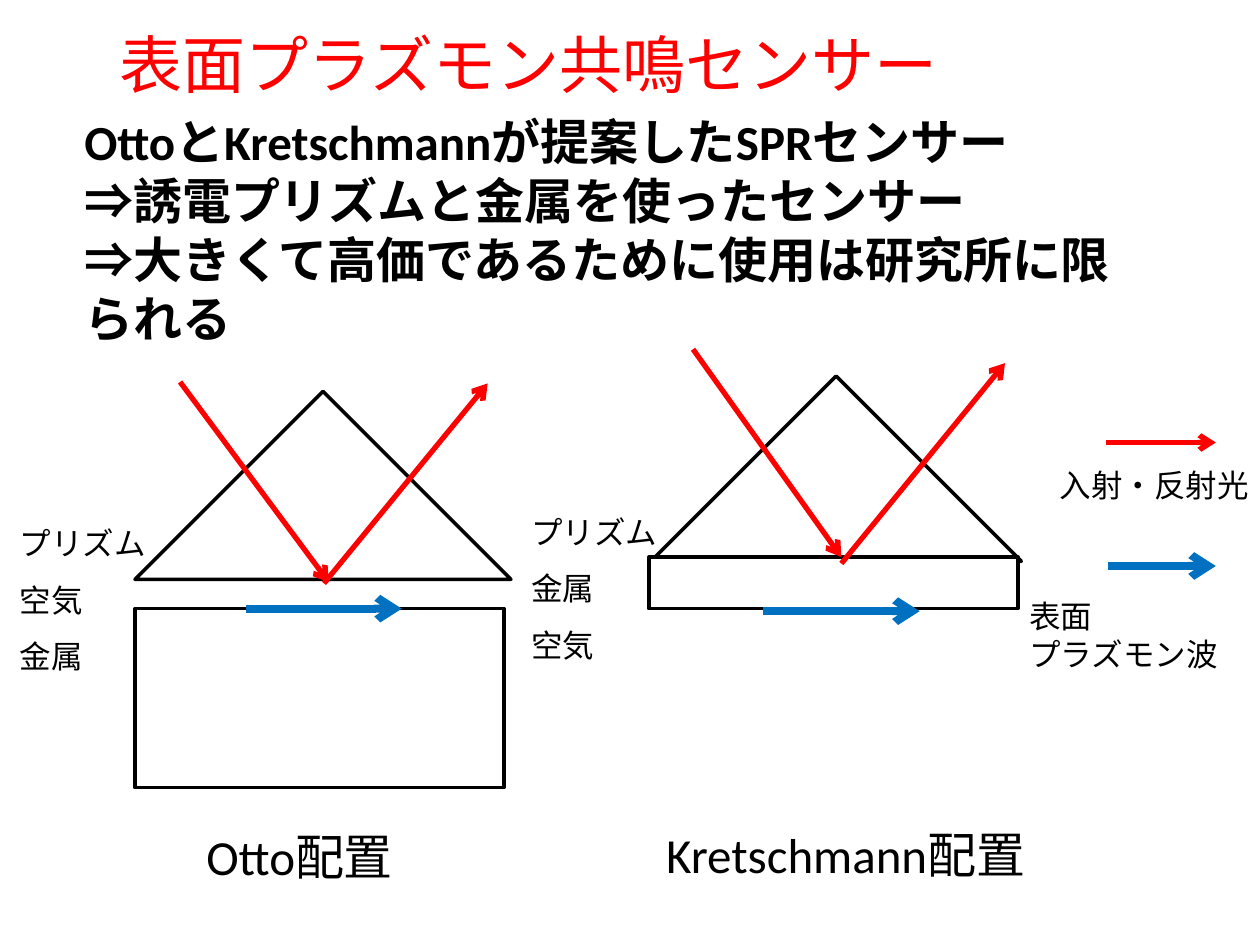
from pptx import Presentation
from pptx.dml.color import RGBColor
from pptx.enum.shapes import MSO_CONNECTOR as Line, MSO_SHAPE as Shape
from pptx.enum.text import MSO_AUTO_SIZE as AutoSize
from pptx.oxml.ns import qn
from pptx.util import Cm, Pt
from lxml.etree import SubElement

BLACK, WHITE, RED, BLUE = "000000", "FFFFFF", "FF0000", "0070C0"
LIGHT_PT, WAVE_PT = 3, 4.5


def rgb(hex_code):
    return RGBColor.from_string(hex_code)


def add_text(s, x, y, w, h, lines, size, color=BLACK, bold=False, spacing=None):
    tf = s.shapes.add_textbox(Cm(x), Cm(y), Cm(w), Cm(h)).text_frame
    tf.word_wrap = True
    tf.auto_size = AutoSize.SHAPE_TO_FIT_TEXT
    for i, line in enumerate(lines):
        p = tf.add_paragraph() if i else tf.paragraphs[0]
        if spacing:
            p.line_spacing = spacing
        r = p.add_run()
        r.text = line
        r.font.name = "Calibri"
        r.font.size = Pt(size)
        r.font.bold = bold
        r.font.color.rgb = rgb(color)


def add_block(s, kind, x, y, w, h, rotation=0):
    sp = s.shapes.add_shape(kind, Cm(x), Cm(y), Cm(w), Cm(h))
    sp.rotation = rotation
    sp.shadow.inherit = False
    sp.fill.solid()
    sp.fill.fore_color.rgb = rgb(WHITE)
    sp.line.color.rgb = rgb(BLACK)
    sp.line.width = Pt(2)


def add_arrow(s, x1, y1, x2, y2, color, width):
    cxn = s.shapes.add_connector(Line.STRAIGHT, Cm(x1), Cm(y1), Cm(x2), Cm(y2))
    cxn.line.color.rgb = rgb(color)
    cxn.line.width = Pt(width)
    SubElement(cxn.line._get_or_add_ln(), qn("a:tailEnd"), type="arrow")
    SubElement(cxn._element.spPr, qn("a:effectLst"))


def add_heading(s, x, y, w):
    add_text(s, x + 0.71, y, w, 1.8, ["表面プラズモン共鳴センサー"], 36, RED)
    add_text(s, x, y + 1.75, w, 5.05, [
        "OttoとKretschmannが提案したSPRセンサー",
        "⇒誘電プリズムと金属を使ったセンサー",
        "⇒大きくて高価であるために使用は研究所に限られる",
    ], 28, bold=True)


def add_setup(s, x, y, prism, metal, layers, caption, rays, wave):
    """Draw one sensor layout; all parts are relative to (x, y)."""
    # Prism and metal
    px, py, pw, ph = prism
    add_block(s, Shape.RIGHT_TRIANGLE, x + px, y + py, pw, ph, rotation=135)
    mx, my, mw, mh = metal
    add_block(s, Shape.RECTANGLE, x + mx, y + my, mw, mh)

    # Layer names and caption
    names, top, width = layers
    add_text(s, x, y + top, width, 3.71, names, 18, spacing=1.5)
    title, cx, cy, cw = caption
    add_text(s, x + cx, y + cy, cw, 1.45, [title], 28)

    # Incident and reflected light, then the plasmon wave
    for x1, y1, x2, y2 in rays:
        add_arrow(s, x + x1, y + y1, x + x2, y + y2, RED, LIGHT_PT)
    wx, wy = wave
    add_arrow(s, x + wx, y + wy, x + wx + 3.15, y + wy, BLUE, WAVE_PT)


def add_legend(s, x, y):
    add_arrow(s, x + 1.8, y, x + 4.01, y, RED, LIGHT_PT)
    add_text(s, x + 0.61, y + 0.36, 5.18, 1.02, ["入射・反射光"], 18)
    add_arrow(s, x + 1.83, y + 2.49, x + 4.01, y + 2.49, BLUE, WAVE_PT)
    add_text(s, x, y + 3, 4.9, 1.8, ["表面", "プラズモン波"], 18)


def main():
    prs = Presentation()
    prs.slide_width, prs.slide_height = Cm(25.4), Cm(19.05)
    s = prs.slides.add_slide(prs.slide_layouts[6])

    add_heading(s, 1.45, 0.38, 21.23)
    # Otto: air gap between prism and metal
    add_setup(
        s, 0.15, 7.7,
        prism=(3.68, 1.3, 5.36, 5.36),
        metal=(2.57, 4.57, 7.44, 3.61),
        layers=(["プリズム", "空気", "金属"], 2.36, 3.4),
        caption=("Otto配置", 3.76, 8.84, 5.08),
        rays=[(3.48, 0, 6.48, 4.04), (6.38, 4.06, 9.68, 0.03)],
        wave=(4.8, 4.57),
    )
    # Kretschmann: metal film directly on the prism
    add_setup(
        s, 10.46, 7.04,
        prism=(3.84, 1.6, 5.18, 5.28),
        metal=(2.62, 4.19, 7.44, 1.04),
        layers=(["プリズム", "金属", "空気"], 2.79, 3.63),
        caption=("Kretschmann配置", 2.72, 9.45, 10.52),
        rays=[(3.51, 0, 6.5, 4.19), (6.5, 4.32, 9.8, 0.28)],
        wave=(4.93, 5.28),
    )
    add_legend(s, 20.5, 8.92)
    prs.save("out.pptx")


if __name__ == "__main__":
    main()
